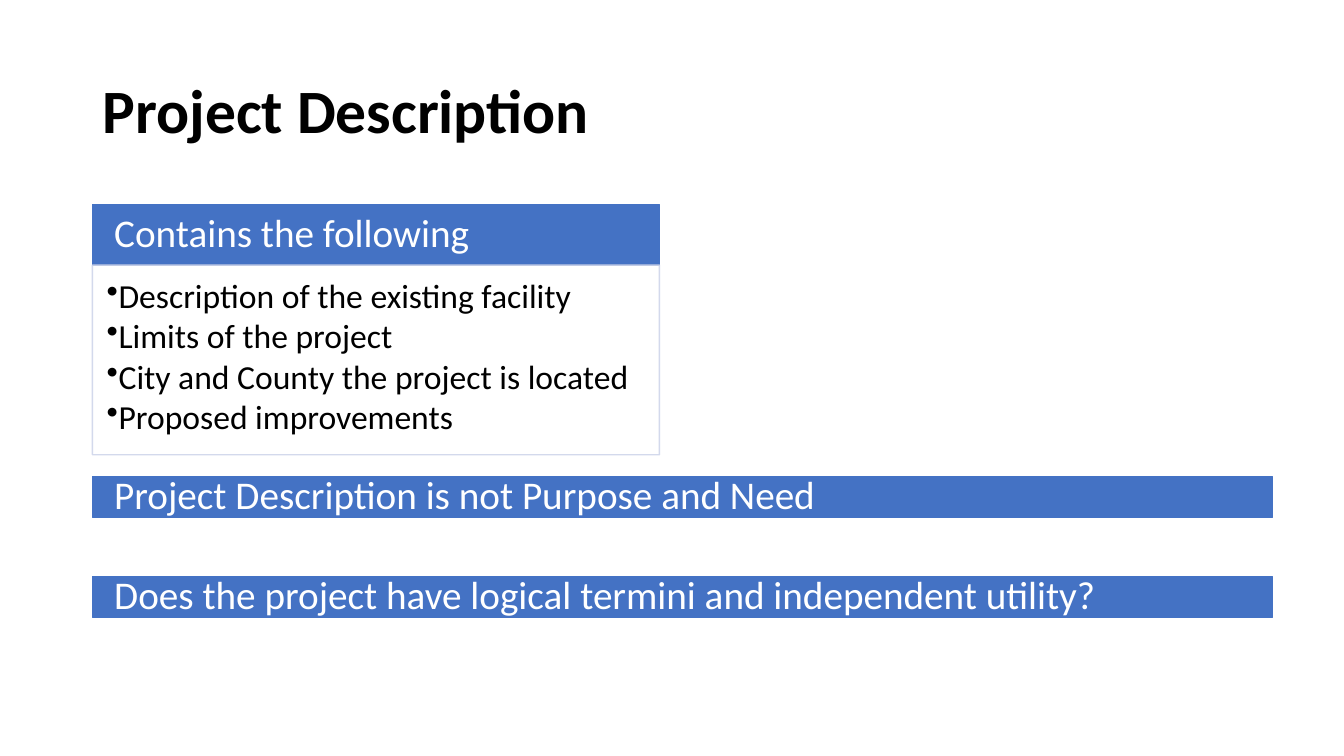
from lxml import etree
from pptx import Presentation
from pptx import util as u
from pptx.dml.color import RGBColor
from pptx.enum import shapes, text
from pptx.oxml.ns import qn

BLUE, PALE, WHITE, BLACK = "4472C4", "CFD5EA", "FFFFFF", "000000"
LEFT = u.Cm(2.33)
CARD_WIDTH, BAR_WIDTH = u.Cm(14.29), u.Cm(29.74)


def color(value):
    return RGBColor.from_string(value)


def write(shape, lines, size, font_color, insets, anchor=text.MSO_ANCHOR.MIDDLE):
    frame = shape.text_frame
    frame.word_wrap = True
    frame.vertical_anchor = anchor
    frame.margin_left, frame.margin_top, frame.margin_right, frame.margin_bottom = map(u.Cm, insets)
    frame.text = "\n".join(lines)
    for paragraph in frame.paragraphs:
        paragraph.alignment = text.PP_ALIGN.LEFT
        paragraph.line_spacing = 0.9
        font = paragraph.runs[0].font
        font.name = "Calibri"
        font.size = u.Pt(size)
        font.color.rgb = color(font_color)
    return frame.paragraphs


presentation = Presentation()
presentation.slide_width, presentation.slide_height = u.Cm(33.87), u.Cm(19.05)
slide = presentation.slides.add_slide(presentation.slide_layouts[6])

title = slide.shapes.add_textbox(LEFT, u.Cm(1.01), u.Cm(29.21), u.Cm(3.68))
title_paragraph = write(title, ["Project Description"], 44, BLACK, (0.25, 0.13, 0.25, 0.13))[0]
title_paragraph.runs[0].font.bold = True

bars = [
    ("Contains the following", 5.15, CARD_WIDTH, 1.53),
    ("Project Description is not Purpose and Need", 12.01, BAR_WIDTH, 1.03),
    ("Does the project have logical termini and independent utility?", 14.53, BAR_WIDTH, 1.03),
]
for label, top, width, height in bars:
    bar = slide.shapes.add_shape(shapes.MSO_SHAPE.RECTANGLE, LEFT, u.Cm(top), width, u.Cm(height))
    bar.shadow.inherit = False
    bar.fill.solid()
    bar.fill.fore_color.rgb = color(BLUE)
    bar.line.color.rgb = color(BLUE)
    bar.line.width = u.Pt(1)
    write(bar, [label], 28, WHITE, (0.55, 0.3, 0.55, 0.3))

contents = slide.shapes.add_shape(
    shapes.MSO_SHAPE.RECTANGLE, LEFT, u.Cm(6.68), CARD_WIDTH, u.Cm(4.78))
contents.shadow.inherit = False
contents.fill.background()
contents.line.color.rgb = color(PALE)
contents.line.width = u.Pt(1)
line_color = contents.line.fill._xPr.find(".//" + qn("a:srgbClr"))
etree.SubElement(line_color, qn("a:alpha")).set("val", "90000")

items = [
    "Description of the existing facility",
    "Limits of the project",
    "City and County the project is located",
    "Proposed improvements",
]
for paragraph in write(contents, items, 24, BLACK, (0.36, 0.36, 0.48, 0.53), text.MSO_ANCHOR.TOP):
    paragraph.space_after = u.Pt(3)
    properties = paragraph._p.get_or_add_pPr()
    properties.set("marL", "0")
    properties.set("indent", "0")
    etree.SubElement(properties, qn("a:buChar")).set("char", "•")

presentation.save("out.pptx")
